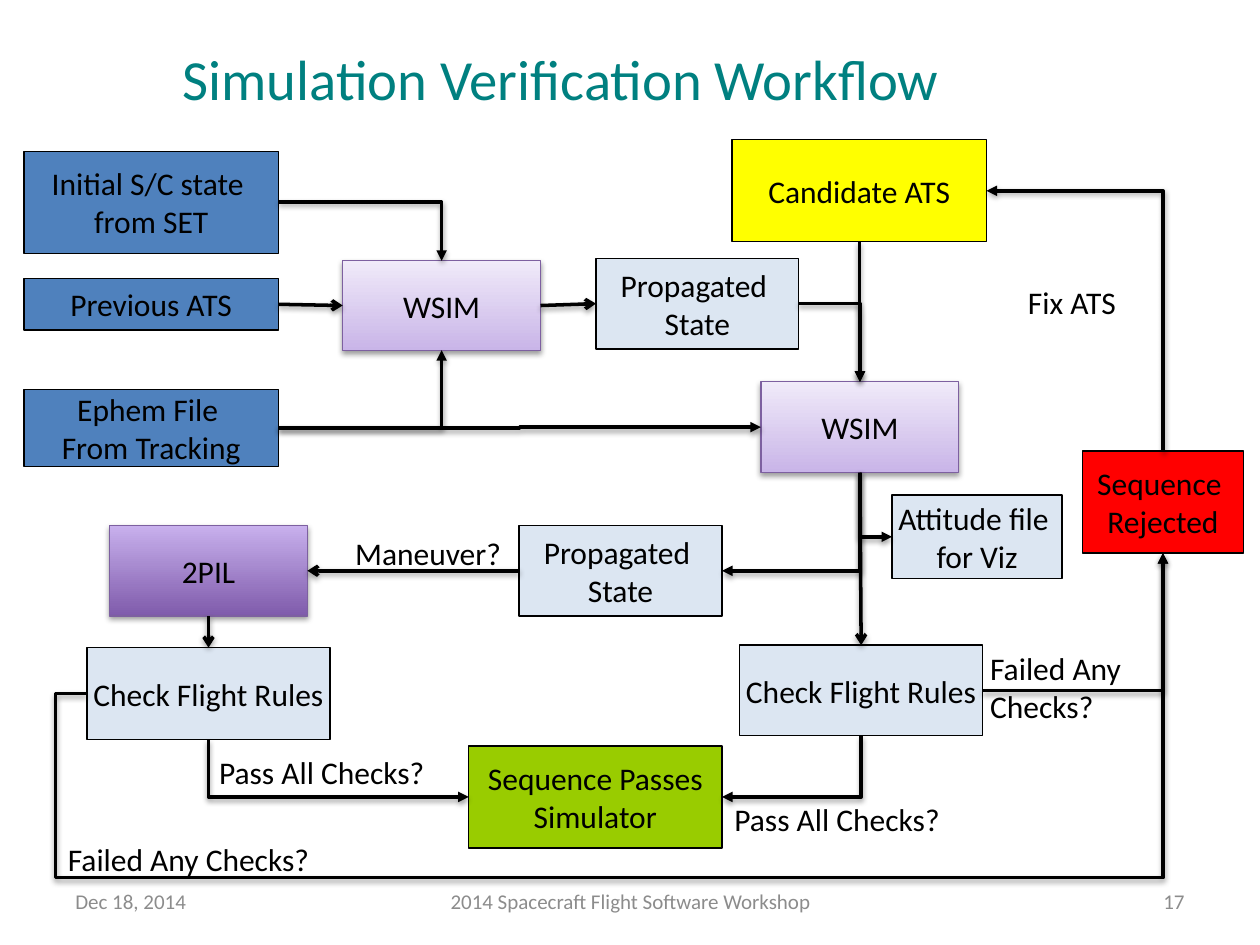
from dataclasses import dataclass
from typing import NamedTuple

from lxml import etree
from pptx import Presentation
from pptx.dml.color import RGBColor
from pptx.enum.shapes import MSO_CONNECTOR, MSO_SHAPE
from pptx.enum.text import MSO_ANCHOR, MSO_AUTO_SIZE, PP_ALIGN
from pptx.oxml.ns import qn
from pptx.util import Inches, Pt

LEFT, CENTER, RIGHT = PP_ALIGN.LEFT, PP_ALIGN.CENTER, PP_ALIGN.RIGHT
MIDDLE, TOP = MSO_ANCHOR.MIDDLE, MSO_ANCHOR.TOP
FIT, FIXED = MSO_AUTO_SIZE.SHAPE_TO_FIT_TEXT, MSO_AUTO_SIZE.NONE
STRAIGHT, ELBOW = MSO_CONNECTOR.STRAIGHT, MSO_CONNECTOR.ELBOW
RECTANGLE = MSO_SHAPE.RECTANGLE
NORTH, WEST, SOUTH, EAST = range(4)  # connection sites of a rectangle

# The grid: 100 columns by 75 rows of square cells
COLUMNS, ROWS = 100, 75
WIDTH, HEIGHT = Inches(10), Inches(7.5)
CELL = WIDTH // COLUMNS


@dataclass(frozen=True)
class Theme:
    font: str = "Calibri"
    title_size: float = 32.4
    body_size: float = 18
    footer_size: float = 12
    border: float = 0.75
    link: float = 2
    title: str = "008080"
    ink: str = "000000"
    muted: str = "8C8C8C"
    source: str = "4F81BD"
    candidate: str = "FFFF00"
    product: str = "DCE6F2"
    passed: str = "99CC00"
    rejected: str = "FF0000"
    tool_line: str = "7D60A0"
    light_tool: tuple[str, str] = ("C9B5E8", "F0EAF9")
    dark_tool: tuple[str, str] = ("7F5BAB", "C8B0ED")


THEME = Theme()


class Area(NamedTuple):
    left: float
    top: float
    width: float
    height: float

    def side(self, site: int) -> tuple[float, float]:
        """Middle of one side, in grid cells."""
        across = {WEST: 0, EAST: 1}.get(site, 0.5)
        down = {NORTH: 0, SOUTH: 1}.get(site, 0.5)
        return self.left + across * self.width, self.top + down * self.height

    def lengths(self) -> list[int]:
        return [round(value * CELL) for value in self]


class Node(NamedTuple):
    text: str
    area: Area
    fill: str | tuple[str, str]


class Link(NamedTuple):
    begin: str
    begin_site: int
    end: str
    end_site: int
    preset: str = "bentConnector2"
    adjustments: tuple[int, ...] = ()


class Label(NamedTuple):
    text: str
    area: Area


NODES = {
    "state": Node("Initial S/C state \nfrom SET", Area(1.9, 12, 20.2, 8.1), THEME.source),
    "previous": Node("Previous ATS", Area(1.9, 22.1, 20.2, 4.1), THEME.source),
    "ephem": Node("Ephem File \nFrom Tracking", Area(1.9, 30.9, 20.2, 6.1), THEME.source),
    "first sim": Node("WSIM", Area(27.2, 20.7, 15.7, 7.1), THEME.light_tool),
    "second sim": Node("WSIM", Area(60.4, 30.3, 15.7, 7.2), THEME.light_tool),
    "candidate": Node("Candidate ATS", Area(58.1, 11.1, 20.2, 8.1), THEME.candidate),
    "first result": Node("Propagated \nState", Area(47.3, 20.5, 16.1, 7.2), THEME.product),
    "second result": Node("Propagated \nState", Area(41.2, 41.7, 16.1, 7.2), THEME.product),
    "maneuver tool": Node("2PIL", Area(8.7, 41.7, 15.7, 7.2), THEME.dark_tool),
    "right rules": Node("Check Flight Rules", Area(58.7, 51.2, 19.3, 7.2), THEME.product),
    "left rules": Node("Check Flight Rules", Area(6.9, 51.4, 19.3, 7.3), THEME.product),
    "passed": Node("Sequence Passes\nSimulator", Area(37.2, 59.2, 20.1, 8.1), THEME.passed),
    "rejected": Node("Sequence \nRejected", Area(85.9, 35.8, 12.8, 8.1), THEME.rejected),
    "attitude": Node("Attitude file \nfor Viz", Area(70.8, 39.3, 13.5, 6.6), THEME.product),
}

STRAIGHT_LINKS = [
    Link("previous", EAST, "first sim", WEST),
    Link("first sim", EAST, "first result", WEST),
    Link("second result", WEST, "maneuver tool", EAST),
    Link("second sim", SOUTH, "right rules", NORTH),
    Link("maneuver tool", SOUTH, "left rules", NORTH),
]

ELBOW_LINKS = [
    Link("state", EAST, "first sim", NORTH),
    Link("ephem", EAST, "first sim", SOUTH),
    Link("ephem", EAST, "second sim", WEST, "bentConnector3"),
    Link("candidate", SOUTH, "second sim", NORTH, "bentConnector3"),
    Link("first result", EAST, "second sim", NORTH),
    Link("second sim", SOUTH, "second result", EAST),
    Link("second sim", SOUTH, "attitude", WEST),
    Link("left rules", SOUTH, "passed", WEST),
    Link("right rules", SOUTH, "passed", EAST),
    Link("right rules", EAST, "rejected", SOUTH),
    Link("left rules", WEST, "rejected", SOUTH, "bentConnector4", (-2900, -131100)),
    Link("rejected", NORTH, "candidate", EAST),
]

LABELS = [
    Label("Pass All Checks?", Area(16.4, 59.3, 23.3, 4)),
    Label("Pass All Checks?", Area(57.3, 63, 23.3, 4)),
    Label("Failed Any Checks?", Area(4.4, 66.2, 27.1, 4)),
    Label("Maneuver?", Area(27.2, 41.9, 14.8, 4)),
    Label("Failed Any\nChecks?", Area(77.6, 51, 24.9, 7.1)),
    Label("Fix ATS", Area(80.6, 22, 24.9, 4)),
]

FOOTERS = [
    (Label("Dec 18, 2014", Area(5, 69.5, 23.3, 4)), LEFT),
    (Label("2014 Spacecraft Flight Software Workshop", Area(34.2, 69.5, 31.7, 4)), CENTER),
    (Label("17", Area(71.7, 69.5, 23.3, 4)), RIGHT),
]


def write(frame, text: str, size: float, color: str, align, anchor, wrap: bool) -> None:
    frame.word_wrap = wrap
    frame.vertical_anchor = anchor
    for index, line in enumerate(text.split("\n")):
        para = frame.add_paragraph() if index else frame.paragraphs[0]
        para.alignment = align
        span = para.add_run()
        span.text = line
        span.font.name = THEME.font
        span.font.size = Pt(size)
        span.font.color.rgb = RGBColor.from_string(color)


def add_shadow(shape) -> None:
    properties = shape._element.spPr
    effects = properties.find(qn("a:effectLst"))
    if effects is None:
        effects = etree.SubElement(properties, qn("a:effectLst"))
    shadow = etree.SubElement(effects, qn("a:outerShdw"), blurRad="40000", dist="20000",
                              dir="5400000", rotWithShape="0")
    color = etree.SubElement(shadow, qn("a:srgbClr"), val=THEME.ink)
    etree.SubElement(color, qn("a:alpha"), val="38000")


def draw_node(page, node: Node):
    box = page.shapes.add_shape(RECTANGLE, *node.area.lengths())
    box.shadow.inherit = False
    is_tool = isinstance(node.fill, tuple)
    if is_tool:
        box.fill.gradient()
        box.fill.gradient_angle = 90
        for stop, color in zip(box.fill.gradient_stops, node.fill):
            stop.color.rgb = RGBColor.from_string(color)
        add_shadow(box)
    else:
        box.fill.solid()
        box.fill.fore_color.rgb = RGBColor.from_string(node.fill)
    box.line.color.rgb = RGBColor.from_string(THEME.tool_line if is_tool else THEME.ink)
    box.line.width = Pt(THEME.border)
    write(box.text_frame, node.text, THEME.body_size, THEME.ink, CENTER, MIDDLE, False)
    return box


def style_link(line, head: str) -> None:
    line.line.color.rgb = RGBColor.from_string(THEME.ink)
    line.line.width = Pt(THEME.link)
    etree.SubElement(line._element.spPr.get_or_add_ln(), qn("a:tailEnd"), type=head)
    add_shadow(line)


def draw_straight(page, link: Link, boxes: dict) -> None:
    line = page.shapes.add_connector(STRAIGHT, 0, 0, 0, 0)
    line.begin_connect(boxes[link.begin], link.begin_site)
    line.end_connect(boxes[link.end], link.end_site)
    style_link(line, "arrow")


def draw_elbow(page, link: Link) -> None:
    x1, y1 = NODES[link.begin].area.side(link.begin_site)
    x2, y2 = NODES[link.end].area.side(link.end_site)
    ends = [round(value * CELL) for value in (x1, y1, x2, y2)]
    line = page.shapes.add_connector(ELBOW, *ends)
    geometry = line._element.spPr.find(qn("a:prstGeom"))
    geometry.set("prst", link.preset)
    guides = geometry.get_or_add_avLst()
    for number, value in enumerate(link.adjustments, 1):
        etree.SubElement(guides, qn("a:gd"), name=f"adj{number}", fmla=f"val {value}")
    if link.begin_site in (NORTH, SOUTH):
        # A line that leaves vertically is a turned one: swap its extents about the centre
        middle_x, middle_y = (ends[0] + ends[2]) // 2, (ends[1] + ends[3]) // 2
        line.width, line.height = line.height, line.width
        line.left, line.top = middle_x - line.width // 2, middle_y - line.height // 2
        frame = line._element.spPr.xfrm
        goes_down, goes_right = y2 > y1, x2 > x1
        frame.rot = 90 if goes_down else 270
        frame.flipH = False
        frame.flipV = goes_down == goes_right
    style_link(line, "triangle")


def draw_label(page, label: Label, size: float, color: str, align, anchor, fit) -> None:
    box = page.shapes.add_textbox(*label.area.lengths())
    write(box.text_frame, label.text, size, color, align, anchor, True)
    box.text_frame.auto_size = fit


def main() -> None:
    deck = Presentation()
    deck.slide_width, deck.slide_height = WIDTH, HEIGHT
    page = deck.slides.add_slide(deck.slide_layouts[5])

    # Title
    title = page.shapes.title
    title.left, title.top, title.width, title.height = Area(10.2, 0.6, 68.6, 11.1).lengths()
    write(title.text_frame, "Simulation Verification Workflow", THEME.title_size,
          THEME.title, CENTER, MIDDLE, True)

    # Workflow
    boxes = {name: draw_node(page, node) for name, node in NODES.items()}
    for link in STRAIGHT_LINKS:
        draw_straight(page, link, boxes)
    for link in ELBOW_LINKS:
        draw_elbow(page, link)

    # Labels and footer
    for label in LABELS:
        draw_label(page, label, THEME.body_size, THEME.ink, LEFT, TOP, FIT)
    for label, align in FOOTERS:
        draw_label(page, label, THEME.footer_size, THEME.muted, align, MIDDLE, FIXED)
    deck.save("out.pptx")


if __name__ == "__main__":
    main()
